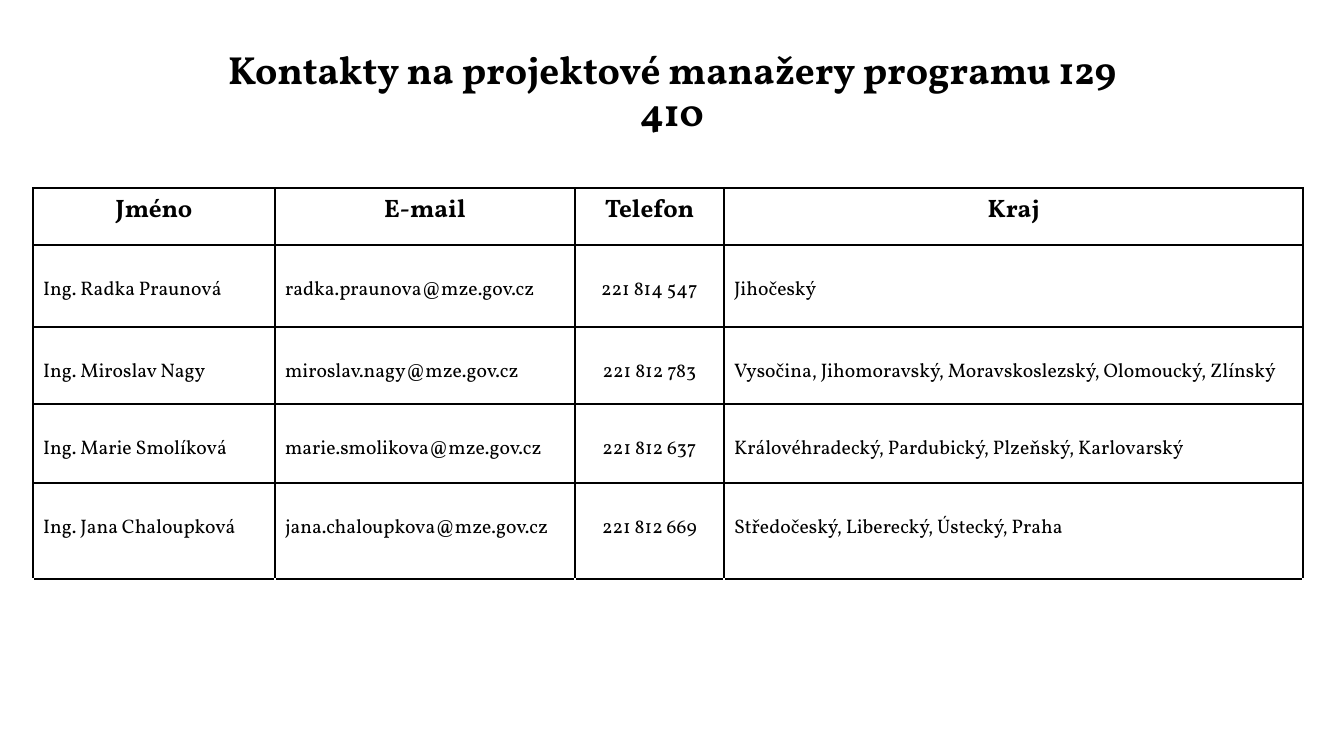
"""Build the slide with contacts of the project managers."""
import pptx
import pptx.util
import pptx.dml.color
import pptx.enum.text
import pptx.oxml
import pptx.oxml.ns

PX = 914400 / 100.8
COLORS = {"ink": "000000", "paper": "FFFFFF"}
ALIGN = pptx.enum.text.PP_ALIGN
ANCHOR = pptx.enum.text.MSO_ANCHOR


def px(size):
    return pptx.util.Emu(round(size * PX))


def write(frame, text, size=14, bold=False, align=ALIGN.LEFT, lead=None):
    line = frame.paragraphs[0]
    line.alignment = align
    line.line_spacing = lead
    run = line.add_run()
    run.text = text
    run.font.name = "Vollkorn"
    run.font.size = pptx.util.Pt(size)
    run.font.bold = bold
    run.font.color.rgb = pptx.dml.color.RGBColor.from_string(COLORS["ink"])


deck = pptx.Presentation()
deck.slide_width, deck.slide_height = px(1344), px(756)
slide = deck.slides.add_slide(deck.slide_layouts[5])
slide.background.fill.solid()
slide.background.fill.fore_color.rgb = pptx.dml.color.RGBColor.from_string(COLORS["paper"])

title = slide.shapes.title
title.left, title.top, title.width, title.height = px(189), px(55), px(966), px(76)
title.text_frame.word_wrap = True
title.text_frame.auto_size = pptx.enum.text.MSO_AUTO_SIZE.NONE
title.text_frame.vertical_anchor = ANCHOR.MIDDLE
write(title.text_frame, "Kontakty na projektové manažery programu 129 410",
      size=28, bold=True, align=ALIGN.CENTER, lead=0.9)

HEAD = ["Jméno", "E-mail", "Telefon", "Kraj"]
PEOPLE = [
    ["Ing. Radka Praunová", "radka.praunova@mze.gov.cz", "221 814 547", "Jihočeský"],
    ["Ing. Miroslav Nagy", "miroslav.nagy@mze.gov.cz", "221 812 783",
     "Vysočina, Jihomoravský, Moravskoslezský, Olomoucký, Zlínský"],
    ["Ing. Marie Smolíková", "marie.smolikova@mze.gov.cz", "221 812 637",
     "Královéhradecký, Pardubický, Plzeňský, Karlovarský"],
    ["Ing. Jana Chaloupková", "jana.chaloupkova@mze.gov.cz", "221 812 669",
     "Středočeský, Liberecký, Ústecký, Praha"],
]
WIDTHS = [242, 300, 149, 579]
HEIGHTS = [57, 82, 77, 79, 96, 63]
ROWS = [HEAD, *PEOPLE, [""] * len(HEAD)]

table = slide.shapes.add_table(len(ROWS), len(HEAD), px(33), px(188),
                               px(sum(WIDTHS)), px(sum(HEIGHTS))).table
table.first_row = table.horz_banding = False
for col, width in zip(table.columns, WIDTHS):
    col.width = px(width)
for row, height in zip(table.rows, HEIGHTS):
    row.height = px(height)

for i, texts in enumerate(ROWS):
    for j, text in enumerate(texts):
        cell = table.cell(i, j)
        props = cell._tc.get_or_add_tcPr()
        for side in "LRTB" if text else "T":
            props.append(pptx.oxml.parse_xml(
                f'<a:ln{side} {pptx.oxml.ns.nsdecls("a")} w="12700"><a:solidFill>'
                f'<a:srgbClr val="{COLORS["ink"]}"/></a:solidFill></a:ln{side}>'))
        cell.fill.background()
        if not text:
            continue
        if i > 0:
            cell.margin_top = px(32)
        middle = i == 0 or HEAD[j] == "Telefon"
        write(cell.text_frame, text, size=14 if i else 18, bold=i == 0,
              align=ALIGN.CENTER if middle else ALIGN.LEFT)

deck.save("out.pptx")
